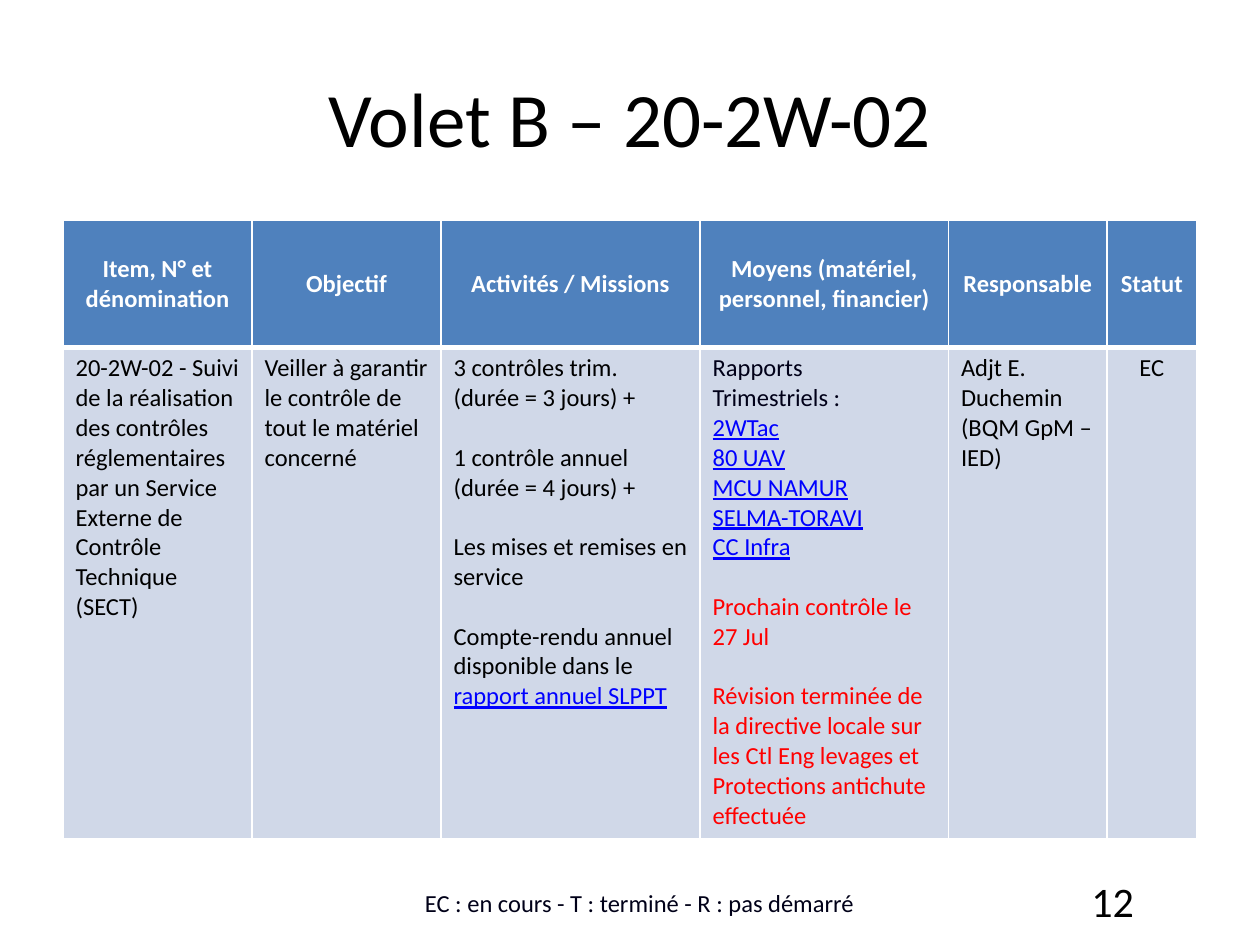
from dataclasses import dataclass
from lxml.etree import SubElement
from pptx import Presentation
from pptx.dml.color import RGBColor
from pptx.enum.text import MSO_ANCHOR, PP_ALIGN
from pptx.oxml.ns import qn
from pptx.util import Pt


@dataclass(frozen=True)
class Theme:
    """Colours, type sizes and font of the slide."""
    font: str = "Calibri"
    title: int = 44
    body: int = 14
    number: int = 24
    gap: int = 17
    black: str = "000000"
    navy: str = "000018"
    white: str = "FFFFFF"
    link: str = "0000FF"
    red: str = "FF0000"
    head: str = "4F81BD"
    band: str = "D0D8E8"


THEME = Theme()
COLS = [108, 108, 148, 142, 90.5, 51.5]
ROWS = [72.5, 281]
HEADS = ["Item, N° et dénomination", "Objectif", "Activités / Missions",
         "Moyens (matériel, personnel, financier)", "Responsable", "Statut"]


def line(text, color=THEME.black, gap=0):
    """Describe a paragraph with one run."""
    return gap, [(text, color)]


GAP = THEME.gap
UNITS = ["2WTac", "80 UAV", "MCU NAMUR", "SELMA-TORAVI", "CC Infra"]
CELLS = [
    [line("20-2W-02 - Suivi de la réalisation des contrôles réglementaires "
          "par un Service Externe de Contrôle Technique (SECT)")],
    [line("Veiller à garantir le contrôle de tout le matériel concerné")],
    [line("3 contrôles trim. (durée = 3 jours) +"),
     line("1 contrôle annuel (durée = 4 jours) +", gap=GAP),
     line("Les mises et remises en service", gap=GAP),
     (GAP, [("Compte-rendu annuel disponible dans le ", THEME.black),
            ("rapport annuel SLPPT", THEME.link)])],
    [line("Rapports", THEME.navy),
     line("Trimestriels :", THEME.navy),
     *[line(unit, THEME.link) for unit in UNITS],
     line("Prochain contrôle le 27 Jul", THEME.red, GAP),
     line("Révision terminée de la directive locale sur les Ctl Eng levages "
          "et Protections antichute effectuée", THEME.red, GAP)],
    [line("Adjt E. Duchemin (BQM GpM – IED)")],
    [line("EC")],
]


def write(frame, lines, size, align=PP_ALIGN.LEFT, bold=False):
    """Fill a text frame with paragraphs of coloured runs."""
    frame.word_wrap = True
    for i, (gap, runs) in enumerate(lines):
        para = frame.add_paragraph() if i else frame.paragraphs[0]
        para.alignment = align
        if gap:
            para.space_before = Pt(gap)
        for text, color in runs:
            run = para.add_run()
            run.text = text
            font = run.font
            font.name, font.size, font.bold = THEME.font, Pt(size), bold
            font.color.rgb = RGBColor.from_string(color)
            if color == THEME.link:
                font.underline = True


def label(slide, box, text, size, align, anchor, color=THEME.black):
    """Place a single line of text in a box."""
    frame = slide.shapes.add_textbox(*map(Pt, box)).text_frame
    frame.vertical_anchor = anchor
    write(frame, [line(text, color)], size, align)


def border(cell, base):
    """Draw white cell borders with a given width for the bottom one."""
    props = cell._tc.get_or_add_tcPr()
    for i, (side, width) in enumerate(
            [("lnL", 1), ("lnR", 1), ("lnT", 1), ("lnB", base)]):
        edge = props.makeelement(qn("a:" + side), {"w": str(Pt(width))})
        fill = SubElement(edge, qn("a:solidFill"))
        SubElement(fill, qn("a:srgbClr"), val=THEME.white)
        props.insert(i, edge)


def paint(cell, fill, base):
    """Set the fill and borders of a cell."""
    cell.fill.solid()
    cell.fill.fore_color.rgb = RGBColor.from_string(fill)
    border(cell, base)


def grid(slide, box):
    """Place the action table, scaled to the box."""
    left, top, width, height = box
    table = slide.shapes.add_table(
        len(ROWS), len(COLS), *map(Pt, box)).table
    for col, size in zip(table.columns, COLS):
        col.width = Pt(size * width / sum(COLS))
    for row, size in zip(table.rows, ROWS):
        row.height = Pt(size * height / sum(ROWS))
    for i, (head, lines) in enumerate(zip(HEADS, CELLS)):
        top_cell, cell = table.cell(0, i), table.cell(1, i)
        top_cell.vertical_anchor = MSO_ANCHOR.MIDDLE
        write(top_cell.text_frame, [line(head, THEME.white)],
              THEME.body, PP_ALIGN.CENTER, True)
        paint(top_cell, THEME.head, 3)
        last = i == len(COLS) - 1
        write(cell.text_frame, lines, THEME.body,
              PP_ALIGN.CENTER if last else PP_ALIGN.LEFT)
        paint(cell, THEME.band, 1)


def footer(slide, box):
    """Place the status key and the page number."""
    left, top, width, height = box
    label(slide, (left + 131, top, 397, height - 1.5),
          "EC : en cours - T : terminé - R : pas démarré", THEME.body,
          PP_ALIGN.CENTER, MSO_ANCHOR.BOTTOM, THEME.navy)
    label(slide, (left + width - 168, top, 139, height), "12",
          THEME.number, PP_ALIGN.RIGHT, MSO_ANCHOR.MIDDLE)


def main():
    """Build the slide and save it."""
    deck = Presentation()
    deck.slide_width, deck.slide_height = Pt(720), Pt(540)
    slide = deck.slides.add_slide(deck.slide_layouts[6])
    label(slide, (36, 21.6, 648, 90), "Volet B – 20-2W-02", THEME.title,
          PP_ALIGN.CENTER, MSO_ANCHOR.MIDDLE)
    grid(slide, (36, 126, 648, 353.5))
    footer(slide, (36, 500.4, 648, 29))
    deck.save("out.pptx")


if __name__ == "__main__":
    main()
